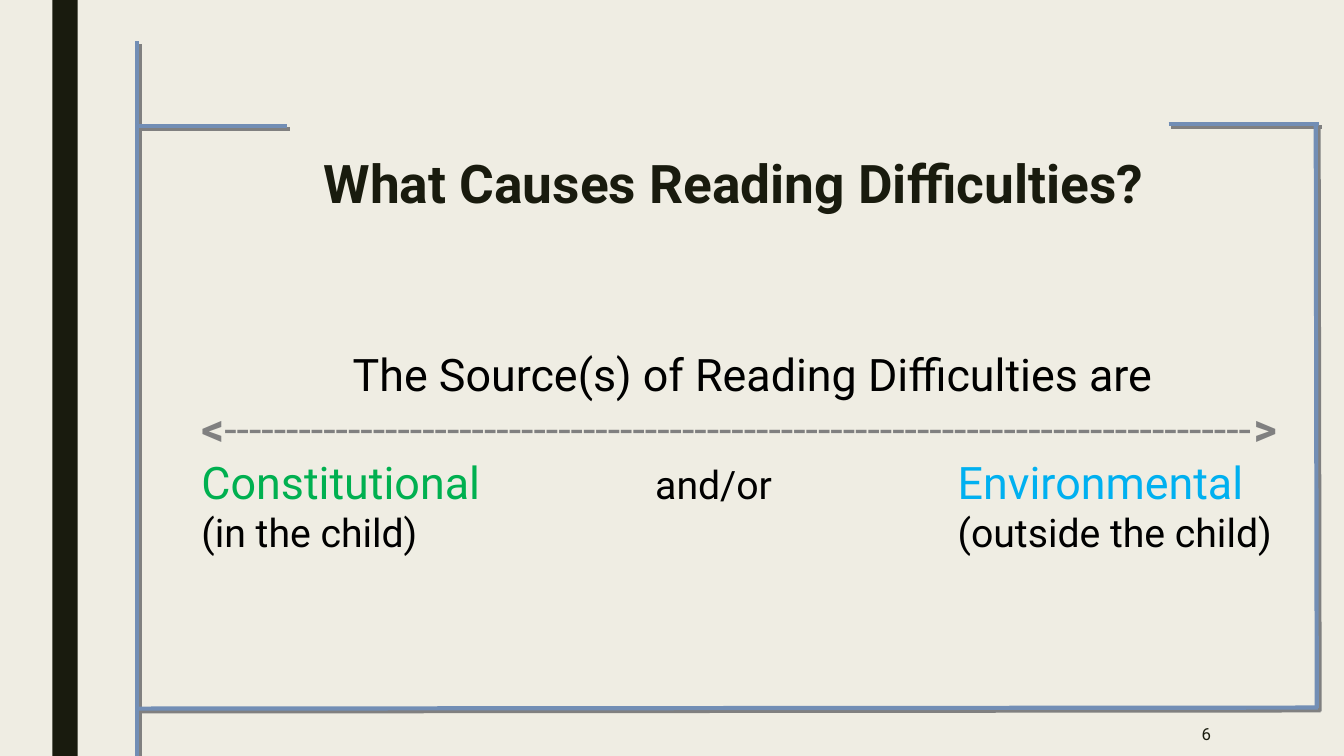
from lxml.etree import SubElement
from pptx import Presentation
from pptx.dml.color import RGBColor
from pptx.enum.shapes import MSO_CONNECTOR, MSO_SHAPE
from pptx.enum.text import MSO_ANCHOR, PP_ALIGN
from pptx.oxml.ns import qn
from pptx.util import Inches, Pt

PAPER, INK, BLACK, GREY = "EFEDE3", "191B0E", "000000", "808080"
FRAME_BLUE, GREEN, SKY = "728EB5", "00B050", "00B0F0"


def rgb(value):
    return RGBColor.from_string(value)


class SlideBuilder:
    font = "Roboto"

    def __init__(self, slide):
        self.slide = slide
        slide.background.fill.solid()
        slide.background.fill.fore_color.rgb = rgb(PAPER)

    def bar(self, left, top, width, height, color):
        bar = self.slide.shapes.add_shape(
            MSO_SHAPE.RECTANGLE, Inches(left), Inches(top), Inches(width), Inches(height))
        bar.shadow.inherit = False
        bar.fill.solid()
        bar.fill.fore_color.rgb = rgb(color)
        bar.line.fill.background()

    def frame_line(self, start, end):
        """Draw a thick line with a hard grey shadow to its lower right."""
        line = self.slide.shapes.add_connector(
            MSO_CONNECTOR.STRAIGHT, *(Inches(v) for v in (*start, *end)))
        line.line.color.rgb = rgb(FRAME_BLUE)
        line.line.width = Pt(3)
        effects = SubElement(line._element.spPr, qn("a:effectLst"))
        shadow = SubElement(effects, qn("a:outerShdw"), blurRad="0",
                            dist=str(Pt(2.8)), dir=str(45 * 60000), algn="ctr")
        SubElement(shadow, qn("a:srgbClr"), val=GREY)

    def text(self, left, top, width, height, paragraphs, inset=0.05,
             align=PP_ALIGN.LEFT, anchor=MSO_ANCHOR.TOP, tabs=()):
        """Each paragraph is a list of (text, size, color, bold) runs."""
        frame = self.slide.shapes.add_textbox(
            Inches(left), Inches(top), Inches(width), Inches(height)).text_frame
        frame.word_wrap = True
        frame.margin_top = Inches(inset)
        frame.vertical_anchor = anchor
        for index, runs in enumerate(paragraphs):
            paragraph = frame.add_paragraph() if index else frame.paragraphs[0]
            paragraph.alignment = align
            if tabs:
                stops = SubElement(paragraph._p.get_or_add_pPr(), qn("a:tabLst"))
                for stop in tabs:
                    SubElement(stops, qn("a:tab"), pos=str(Inches(stop)), algn="l")
            for words, size, color, bold in runs:
                run = paragraph.add_run()
                run.text = words
                run.font.name = self.font
                run.font.size = Pt(size)
                run.font.bold = bold
                run.font.color.rgb = rgb(color)


def main():
    deck = Presentation()
    deck.slide_width, deck.slide_height = Inches(13.33), Inches(7.5)
    page = SlideBuilder(deck.slides.add_slide(deck.slide_layouts[6]))

    page.bar(0.52, 0, 0.25, 7.5, INK)
    page.text(3.11, 0.95, 9, 1.82,
              [[("What Causes Reading Difficulties?", 38, INK, True)]], inset=0.54)

    source_tab, middle_tab, right_tab = 1.5, 4.5, 7.5
    page.text(1.9, 2.86, 10.91, 3.26, [
        [("\tThe Source(s) of Reading Difficulties are", 32, BLACK, False)],
        [("<", 32, GREY, True), ("-" * 83, 32, GREY, False), (">", 32, GREY, True)],
        [("Constitutional", 32, GREEN, False), ("\tand/or", 28, BLACK, False),
         ("\tEnvironmental", 32, SKY, False)],
        [("(in the child)\t\t(outside the child)", 28, BLACK, False)],
    ], inset=0.58, tabs=(source_tab, middle_tab, right_tab))
    page.text(10.36, 7.06, 1.75, 0.44, [[("6", 12, INK, False)]],
              align=PP_ALIGN.RIGHT, anchor=MSO_ANCHOR.MIDDLE)

    for start, end in (
        ((11.59, 1.23), (13.08, 1.23)),
        ((13.06, 7.03), (13.05, 1.22)),
        ((1.36, 7.5), (1.36, 0.41)),
        ((1.35, 1.25), (2.85, 1.25)),
        ((1.36, 7.03), (13.07, 7.02)),
    ):
        page.frame_line(start, end)

    deck.save("out.pptx")


if __name__ == "__main__":
    main()
